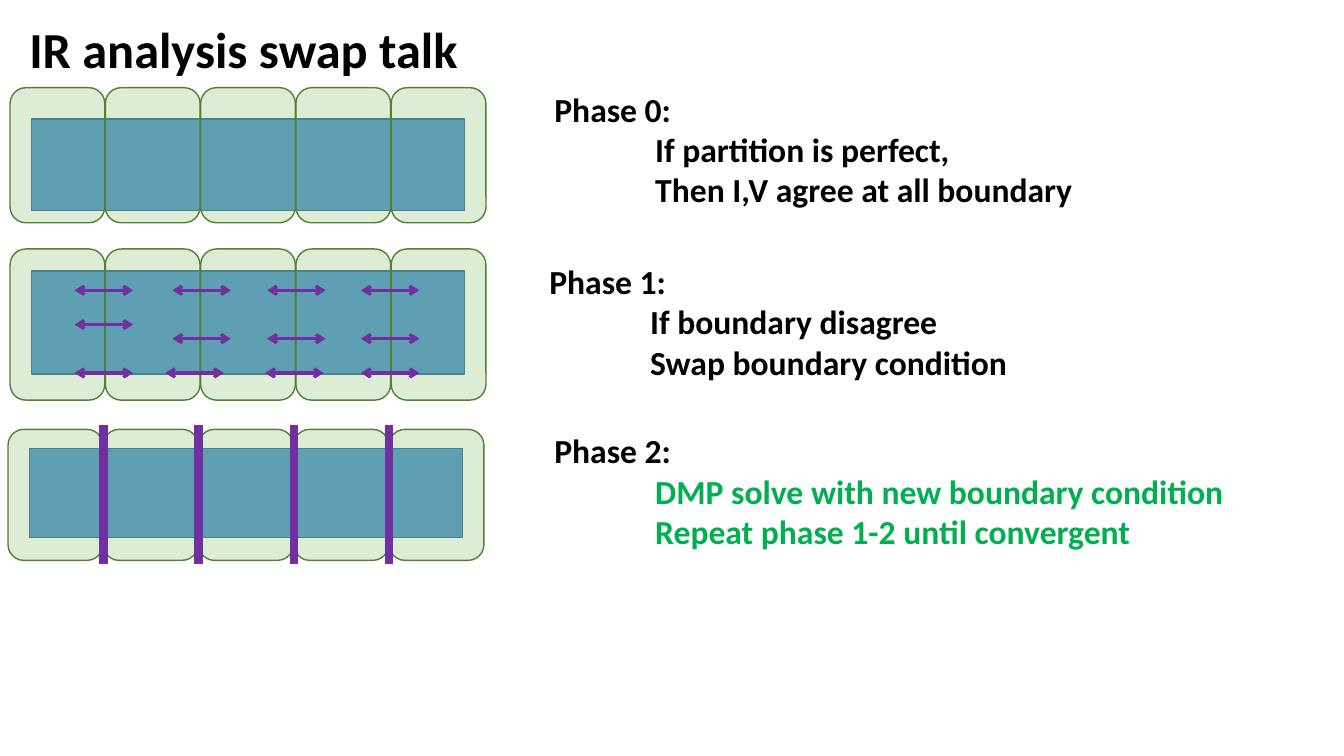
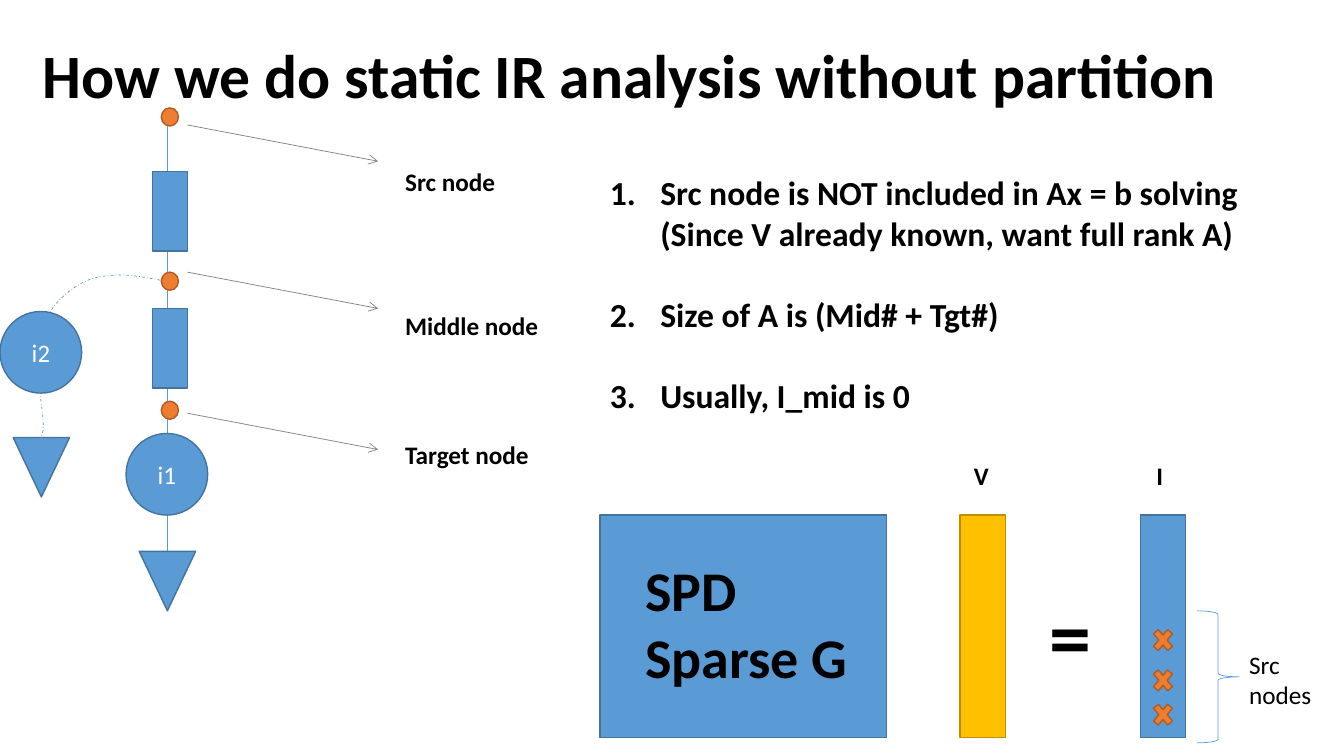
from pptx import Presentation
from pptx.dml.color import RGBColor
from pptx.enum.dml import MSO_LINE
from pptx.enum.shapes import MSO_CONNECTOR, MSO_SHAPE
from pptx.enum.text import MSO_ANCHOR, MSO_AUTO_SIZE, PP_ALIGN
from pptx.oxml.ns import qn
from pptx.util import Inches, Pt
from lxml.etree import SubElement

FONT = "Calibri"
BLACK = RGBColor(0x00, 0x00, 0x00)
WHITE = RGBColor(0xFF, 0xFF, 0xFF)
BLUE = RGBColor(0x5B, 0x9B, 0xD5)
BLUE_EDGE = RGBColor(0x43, 0x73, 0x9E)
ORANGE = RGBColor(0xED, 0x7D, 0x31)
ORANGE_EDGE = RGBColor(0xAF, 0x5C, 0x24)
GOLD = RGBColor(0xFF, 0xC0, 0x00)
GOLD_EDGE = RGBColor(0xBD, 0x8E, 0x00)
LEAF = RGBColor(0x70, 0xAD, 0x47)
LEAF_EDGE = RGBColor(0x53, 0x80, 0x35)
GREEN = RGBColor(0x00, 0xB0, 0x50)
PURPLE = RGBColor(0x70, 0x30, 0xA0)
GRAY = RGBColor(0x80, 0x80, 0x80)

TILES = 5
TILE_W = 0.94
PITCH = 0.945


def add_run(p, text, size, color=BLACK, bold=True):
    r = p.add_run()
    r.text = text
    r.font.name = FONT
    r.font.size = Pt(size)
    r.font.bold = bold
    r.font.color.rgb = color


def set_indent(p, left, first=0):
    pPr = p._p.get_or_add_pPr()
    pPr.set("marL", str(Inches(left)))
    pPr.set("indent", str(Inches(first)))
    return pPr


def add_title(s, text, size, x, y, w, h):
    sp = s.shapes.title
    sp.left, sp.top, sp.width, sp.height = map(Inches, (x, y, w, h))
    tf = sp.text_frame
    tf.word_wrap = False
    tf.auto_size = MSO_AUTO_SIZE.NONE
    tf.vertical_anchor = MSO_ANCHOR.TOP
    p = tf.paragraphs[0]
    p.alignment = PP_ALIGN.LEFT
    add_run(p, text, size)


def add_text(s, lines, size, x, y, w, h, bold=True):
    tf = s.shapes.add_textbox(*map(Inches, (x, y, w, h))).text_frame
    tf.word_wrap = False
    tf.auto_size = MSO_AUTO_SIZE.SHAPE_TO_FIT_TEXT
    for i, line in enumerate(lines):
        p = tf.add_paragraph() if i else tf.paragraphs[0]
        add_run(p, line, size, bold=bold)
    return tf


def add_box(shapes, kind, x, y, w, h, fill=BLUE, edge=BLUE_EDGE, alpha=None):
    sp = shapes.add_shape(kind, *map(Inches, (x, y, w, h)))
    sp.shadow.inherit = False
    sp.fill.solid()
    sp.fill.fore_color.rgb = fill
    sp.line.color.rgb = edge
    sp.line.width = Pt(1)
    if alpha:
        clr = sp.fill._xPr.find(qn("a:solidFill"))[0]
        SubElement(clr, qn("a:alpha")).set("val", str(alpha * 1000))
    return sp


def add_line(shapes, x1, y1, x2, y2, color, width, ends=()):
    c = shapes.add_connector(MSO_CONNECTOR.STRAIGHT, *map(Inches, (x1, y1, x2, y2)))
    c.line.color.rgb = color
    c.line.width = Pt(width)
    for end in ends:
        SubElement(c.line._get_or_add_ln(), qn(end)).set("type", "arrow")
    SubElement(c._element.spPr, qn("a:effectLst"))


def add_partition(s, x, y, h, core_dy, core_h, bars=False):
    shapes = s.shapes.add_group_shape().shapes
    add_box(shapes, MSO_SHAPE.RECTANGLE, x + 0.21, y + core_dy, 4.3, core_h)
    for i in range(TILES):
        add_box(shapes, MSO_SHAPE.ROUNDED_RECTANGLE, x + i * PITCH, y, TILE_W, h,
                LEAF, LEAF_EDGE, alpha=23)
    if bars:
        for i in range(1, TILES):
            bx = x + i * PITCH
            add_line(shapes, bx, y - 0.04, bx, y + h + 0.04, PURPLE, 6)


def add_swaps(s, x, y):
    rows = (
        (0.41, (0.64, 1.61, 2.55, 3.48)),
        (0.75, (0.64,)),
        (0.89, (1.61, 2.55, 3.48)),
        (1.23, (0.64, 1.54, 2.53, 3.48)),
    )
    for dy, starts in rows:
        for dx in starts:
            add_line(s.shapes, x + dx, y + dy, x + dx + 0.58, y + dy, PURPLE, 2.25,
                     ("a:headEnd", "a:tailEnd"))


def add_phase(s, heading, steps, x, y, w, color=BLACK):
    tf = add_text(s, [heading], 24, x, y, w, 1.31)
    for step in steps:
        p = tf.add_paragraph()
        set_indent(p, 1)
        add_run(p, step, 24, color)


def build_swap_slide(prs):
    s = prs.slides.add_slide(prs.slide_layouts[5])
    add_title(s, "IR analysis swap talk", 36, 0.19, 0.13, 4.5, 0.71)
    add_partition(s, 0.1, 0.87, 1.34, 0.31, 0.91)
    add_partition(s, 0.1, 2.47, 1.5, 0.22, 1.02)
    add_swaps(s, 0.1, 2.47)
    add_partition(s, 0.08, 4.26, 1.3, 0.19, 0.88, bars=True)
    add_phase(s, "Phase 0:", ("If partition is perfect,", "Then I,V agree at all boundary"),
              5.4, 0.83, 5.39)
    add_phase(s, "Phase 1:", ("If boundary disagree", "Swap boundary condition"),
              5.35, 2.54, 4.79)
    add_phase(s, "Phase 2:", ("DMP solve with new boundary condition",
                              "Repeat phase 1-2 until convergent"),
              5.4, 4.22, 6.9, GREEN)


def bezier(a, b, c, d, steps=12):
    for i in range(1, steps + 1):
        t = i / steps
        u = 1 - t
        yield tuple(u**3 * m + 3 * u * u * t * n + 3 * u * t * t * o + t**3 * q
                    for m, n, o, q in zip(a, b, c, d))


def add_branch_wire(s, x, y):
    knots = [(1.59, 1.71), (1.43, 1.68), (1.27, 1.65), (1.14, 1.66), (1.01, 1.67),
             (0.92, 1.68), (0.81, 1.74), (0.7, 1.8), (0.56, 1.91), (0.49, 2.04),
             (0.42, 2.18), (0.39, 2.37), (0.38, 2.55), (0.37, 2.73), (0.43, 3.01),
             (0.43, 3.14), (0.43, 3.26), (0.4, 3.28), (0.38, 3.3)]
    knots = [(Inches(x + dx), Inches(y + dy)) for dx, dy in knots]
    fb = s.shapes.build_freeform(*knots[0])
    for i in range(0, len(knots) - 1, 3):
        fb.add_line_segments(list(bezier(*knots[i:i + 4])), close=False)
    sp = fb.convert_to_shape()
    sp.shadow.inherit = False
    sp.fill.background()
    sp.line.color.rgb = BLUE
    sp.line.width = Pt(0.5)
    sp.line.dash_style = MSO_LINE.DASH_DOT


def add_source(s, name, x, y, ground_x, ground_y):
    sp = add_box(s.shapes, MSO_SHAPE.OVAL, x, y, 0.81, 0.81)
    tf = sp.text_frame
    tf.vertical_anchor = MSO_ANCHOR.MIDDLE
    p = tf.paragraphs[0]
    p.alignment = PP_ALIGN.CENTER
    add_run(p, name, 18, WHITE, bold=False)
    ground = add_box(s.shapes, MSO_SHAPE.ISOSCELES_TRIANGLE, ground_x, ground_y, 0.56, 0.59)
    ground.rotation = 180


def add_circuit(s, x, y):
    add_line(s.shapes, x + 1.66, y + 0.09, x + 1.66, y + 4.4, BLUE, 0.5)
    for dy in (0.63, 1.99):
        add_box(s.shapes, MSO_SHAPE.RECTANGLE, x + 1.51, y + dy, 0.35, 0.79)
    nodes = (
        ("Src node", 1.09, 0, 0.17, 0.53),
        ("Middle node", 1.53, 1.63, 1.63, 1.96),
        ("Target node", 1.44, 2.91, 3.03, 3.24),
    )
    for label, w, node_dy, arrow_dy, label_dy in nodes:
        ay = y + arrow_dy
        add_line(s.shapes, x + 1.86, ay, x + 3.75, ay + 0.36, GRAY, 0.5, ("a:tailEnd",))
        add_text(s, [label], 18, x + 3.92, y + label_dy, w, 0.4)
        add_box(s.shapes, MSO_SHAPE.OVAL, x + 1.6, y + node_dy, 0.17, 0.18,
                ORANGE, ORANGE_EDGE)
    add_source(s, "i1", x + 1.25, y + 3.23, x + 1.38, y + 4.4)
    add_source(s, "i2", x, y + 2.02, x + 0.13, y + 3.27)
    add_branch_wire(s, x, y)


def add_notes_list(s, x, y, w, h):
    items = (
        ("Src node is NOT included in Ax = b solving",
         "(Since V already known, want full rank A)"),
        ("Size of A is (Mid# + Tgt#)",),
        ("Usually, I_mid is 0",),
    )
    tf = add_text(s, [], 24, x, y, w, h)
    for i, lines in enumerate(items):
        p = tf.add_paragraph() if i else tf.paragraphs[0]
        if i:
            p.space_before = Pt(29)
        pPr = set_indent(p, 0.5, -0.5)
        SubElement(pPr, qn("a:buFont")).set("typeface", "+mj-lt")
        SubElement(pPr, qn("a:buAutoNum")).set("type", "arabicPeriod")
        for j, line in enumerate(lines):
            if j:
                p.add_line_break()
            add_run(p, line, 24)


def add_equation(s, x, y):
    top = y + 0.59
    columns = (
        (0, 2.84, BLUE, BLUE_EDGE),
        (3.57, 0.45, GOLD, GOLD_EDGE),
        (5.36, 0.45, BLUE, BLUE_EDGE),
    )
    for dx, w, fill, edge in columns:
        add_box(s.shapes, MSO_SHAPE.RECTANGLE, x + dx, top, w, 2.21, fill, edge)
    add_text(s, ["="], 60, x + 4.36, y + 1.22, 0.62, 1.11)
    for dy in (1.67, 2.07, 2.41):
        add_box(s.shapes, MSO_SHAPE.MATH_MULTIPLY, x + 5.45, y + dy, 0.27, 0.32,
                ORANGE, ORANGE_EDGE)
    brace = add_box(s.shapes, MSO_SHAPE.RIGHT_BRACE, x + 5.92, y + 1.54, 0.42, 1.31, edge=BLUE)
    brace.fill.background()
    brace.line.width = Pt(0.5)
    add_text(s, ["Src", "nodes"], 18, x + 6.34, y + 1.87, 0.83, 0.71, bold=False)
    add_text(s, ["SPD", "Sparse G"], 40, x + 0.35, y + 0.94, 2.23, 1.45)
    add_text(s, ["V"], 18, x + 3.61, y, 0.35, 0.4)
    add_text(s, ["I"], 18, x + 5.42, y, 0.27, 0.4)


def build_static_slide(prs):
    s = prs.slides.add_slide(prs.slide_layouts[5])
    add_title(s, "How we do static IR analysis without partition", 44, 0.32, 0.32, 11.97, 0.84)
    add_circuit(s, 0, 1.07)
    add_notes_list(s, 5.95, 1.66, 6.48, 2.52)
    add_equation(s, 5.95, 4.52)


def main():
    prs = Presentation()
    prs.slide_width = Inches(13.33)
    prs.slide_height = Inches(7.5)
    build_swap_slide(prs)
    build_static_slide(prs)
    prs.save("out.pptx")


if __name__ == "__main__":
    main()
